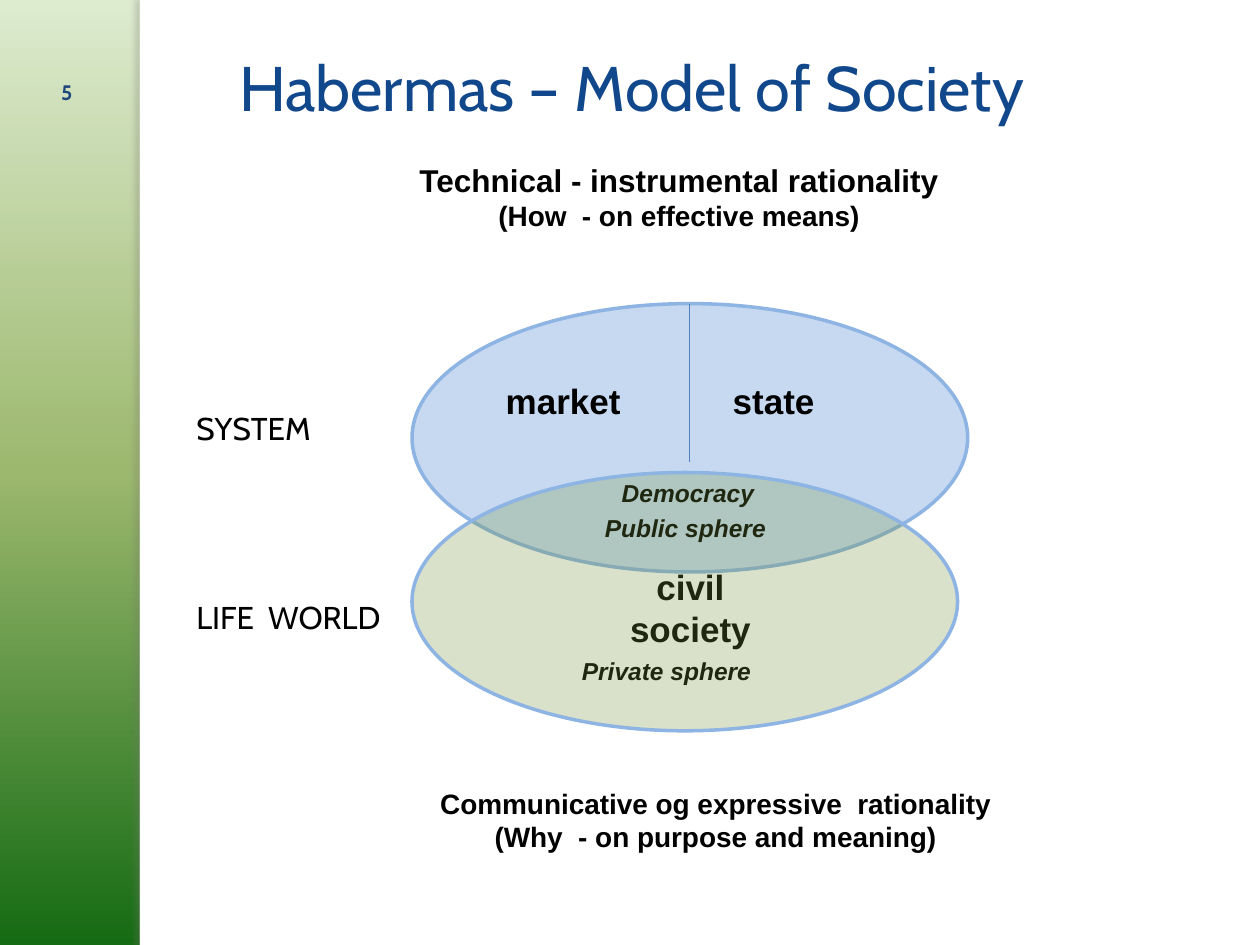
from lxml import etree
from pptx import Presentation
from pptx.dml.color import RGBColor
from pptx.enum.shapes import MSO_CONNECTOR, MSO_SHAPE
from pptx.enum.text import MSO_ANCHOR, PP_ALIGN
from pptx.oxml import parse_xml
from pptx.oxml.ns import nsdecls, qn
from pptx.util import Inches, Pt

COLORS = {
    "white": "FFFFFF", "black": "000000", "title": "11478B", "number": "1F497D",
    "system": "C6D9F1", "life": "77933C", "outline": "8EB4E3", "divider": "4F81BD",
    "shadow": "77756F",
}
GRADIENT = [(0, "DDEBCF"), (50, "9CB86E"), (100, "156B13")]

SYSTEM_OVAL = (3.27, 2.41, 4.41, 2.13)
LIFE_OVAL = (3.27, 3.75, 4.33, 2.05)
DIVIDER = (5.47, 2.41, 5.47, 3.67)

STYLES = {
    "heading": {"size": Pt(20), "bold": True, "name": "Arial"},
    "sphere": {"size": Pt(14), "bold": True, "italic": True, "name": "Arial"},
    "world": {"size": Pt(18), "name": "Cabin"},
    "title": {"size": Pt(36), "name": "Cabin"},
    "number": {"size": Pt(12), "bold": True, "name": "Cabin"},
    "large": {"size": Pt(18), "bold": True, "name": "Arial"},
    "note": {"size": Pt(16), "bold": True, "name": "Arial"},
}

# text, style, centre x, centre y
OVAL_LABELS = [
    ("market", "heading", 4.47, 3.18),
    ("state", "heading", 6.14, 3.18),
    ("Democracy", "sphere", 5.46, 3.91),
    ("Public sphere", "sphere", 5.44, 4.19),
    ("civil society", "heading", 5.48, 4.82),
    ("Private sphere", "sphere", 5.29, 5.32),
]
LABEL_W, LABEL_H = 1.6, 0.36

# lines of (text, style), box, colour, alignment, anchor
TEXTS = [
    ([("Habermas – Model of Society", "title")],
     (1.8, 0.3, 8.2, 0.77), "title", PP_ALIGN.LEFT, MSO_ANCHOR.MIDDLE),
    ([("5", "number")],
     (0.28, 0.36, 0.5, 0.52), "number", PP_ALIGN.CENTER, MSO_ANCHOR.BOTTOM),
    ([("Technical - instrumental rationality", "large"),
      ("(How  - on effective means)", "note")],
     (2.87, 1.23, 5.04, 0.98), "black", PP_ALIGN.CENTER, MSO_ANCHOR.TOP),
    ([("Communicative og expressive  rationality", "note"),
      ("(Why  - on purpose and meaning)", "note")],
     (3.32, 6.19, 4.72, 0.94), "black", PP_ALIGN.CENTER, MSO_ANCHOR.TOP),
    ([("SYSTEM", "world")],
     (1.46, 3.2, 1.73, 0.4), "black", PP_ALIGN.LEFT, MSO_ANCHOR.MIDDLE),
    ([("LIFE  WORLD", "world")],
     (1.46, 4.7, 1.73, 0.4), "black", PP_ALIGN.LEFT, MSO_ANCHOR.MIDDLE),
]


def rgb(name):
    return RGBColor.from_string(COLORS[name])


def set_background(s):
    """Fill the slide with the vertical gradient."""
    s.background.fill.solid()
    stops = "".join(f'<a:gs pos="{pos * 1000}"><a:srgbClr val="{c}"/></a:gs>'
                    for pos, c in GRADIENT)
    grad = parse_xml(f'<a:gradFill {nsdecls("a")}><a:gsLst>{stops}</a:gsLst>'
                     '<a:lin ang="5400000" scaled="0"/></a:gradFill>')
    solid = s.background._cSld.find(".//" + qn("a:solidFill"))
    solid.getparent().replace(solid, grad)


def add_shape(s, kind, box, fill, line=None):
    sp = s.shapes.add_shape(kind, *map(Inches, box))
    sp.shadow.inherit = False
    sp.fill.solid()
    sp.fill.fore_color.rgb = rgb(fill)
    if line:
        sp.line.color.rgb = rgb(line)
        sp.line.width = Pt(2)
    else:
        sp.line.fill.background()
    return sp


def add_edge_shadow(sp):
    effects = sp._element.spPr.find(qn("a:effectLst"))
    effects.append(parse_xml(
        f'<a:outerShdw {nsdecls("a")} blurRad="{Pt(3)}" dist="{Pt(3)}" dir="10800000">'
        f'<a:srgbClr val="{COLORS["shadow"]}"><a:alpha val="25000"/></a:srgbClr>'
        '</a:outerShdw>'))


def add_text(s, lines, box, color, align, anchor):
    tf = s.shapes.add_textbox(*map(Inches, box)).text_frame
    tf.word_wrap = True
    tf.vertical_anchor = anchor
    for i, (text, style) in enumerate(lines):
        p = tf.paragraphs[0] if i == 0 else tf.add_paragraph()
        p.alignment = align
        r = p.add_run()
        r.text = text
        r.font.color.rgb = rgb(color)
        for key, value in STYLES[style].items():
            setattr(r.font, key, value)


def add_divider(s):
    line = s.shapes.add_connector(MSO_CONNECTOR.STRAIGHT, *map(Inches, DIVIDER))
    line.line.color.rgb = rgb("divider")
    line.line.width = Pt(0.75)
    etree.SubElement(line._element.spPr, qn("a:effectLst"))


def main():
    prs = Presentation()
    prs.slide_width, prs.slide_height = Inches(10), Inches(7.5)
    s = prs.slides.add_slide(prs.slide_layouts[6])

    set_background(s)
    add_shape(s, MSO_SHAPE.RECTANGLE, (1.11, 0, 8.89, 7.5), "white")
    add_edge_shadow(add_shape(s, MSO_SHAPE.RECTANGLE, (1.11, 0, 0.08, 7.5), "white"))

    add_shape(s, MSO_SHAPE.OVAL, SYSTEM_OVAL, "system", "outline")
    for text, style, x, y in OVAL_LABELS:
        box = (x - LABEL_W / 2, y - LABEL_H / 2, LABEL_W, LABEL_H)
        add_text(s, [(text, style)], box, "black", PP_ALIGN.CENTER, MSO_ANCHOR.MIDDLE)
    add_divider(s)
    for item in TEXTS:
        add_text(s, *item)

    # The translucent oval lies over its labels and tints them
    life = add_shape(s, MSO_SHAPE.OVAL, LIFE_OVAL, "life", "outline")
    clr = life._element.spPr.find(qn("a:solidFill")).find(qn("a:srgbClr"))
    etree.SubElement(clr, qn("a:alpha"), val="27000")

    prs.save("out.pptx")


if __name__ == "__main__":
    main()
